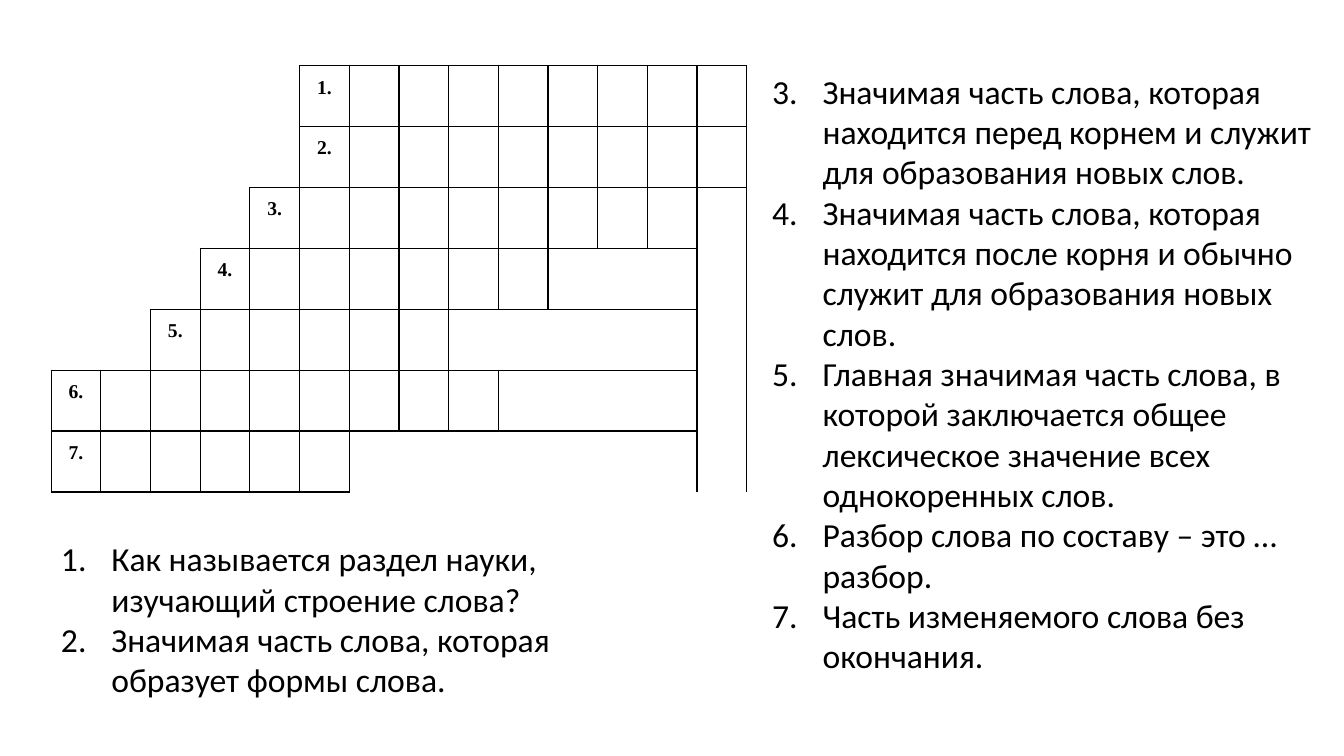
"""Build a word-structure crossword slide with its seven numbered clues."""
from lxml import etree
from pptx import Presentation
from pptx.dml.color import RGBColor
from pptx.enum.text import MSO_AUTO_SIZE, PP_ALIGN
from pptx.oxml.ns import qn
from pptx.util import Pt

BLACK = RGBColor(0, 0, 0)
WHITE = RGBColor(255, 255, 255)
CENTER = PP_ALIGN.CENTER
FIT_SHAPE = MSO_AUTO_SIZE.SHAPE_TO_FIT_TEXT
NO_STYLE = "{2D5ABB26-0587-4C30-8999-92F81FD0307C}"

COLUMNS = 14
LAST = COLUMNS - 1
CELL_WIDTH, CELL_HEIGHT = 35.5, 43.5
ANSWERS = [(5, 9), (5, 9), (4, 9), (3, 7), (2, 6), (0, 9), (0, 6)]
BLANKS = [
    (0, 0, 2, 1), (0, 2, 1, 4), (2, 2, 2, 3), (3, 0, 3, 2), (4, 0, 4, 1),
    (3, 10, 3, 12), (4, 8, 4, 12), (5, 9, 5, 12), (6, 6, 6, 12), (2, 13, 6, 13),
]
CLUES_BELOW = [
    "Как называется раздел науки, изучающий строение слова?",
    "Значимая часть слова, которая образует формы слова.",
]
CLUES_RIGHT = [
    "Значимая часть слова, которая находится перед корнем и служит для образования новых слов.",
    "Значимая часть слова, которая находится после корня и обычно служит для образования новых слов.",
    "Главная значимая часть слова, в которой заключается общее лексическое значение всех однокоренных слов.",
    "Разбор слова по составу – это … разбор.",
    "Часть изменяемого слова без окончания.",
]


def draw_borders(cell, sides):
    properties = cell._tc.get_or_add_tcPr()
    for side in sides:
        line = etree.SubElement(properties, qn(f"a:ln{side}"), w=str(Pt(1)))
        ink = etree.SubElement(line, qn("a:solidFill"))
        etree.SubElement(ink, qn("a:srgbClr"), val=str(BLACK))


def add_clues(clues, first_number, left, top, width, height):
    box = slide.shapes.add_textbox(Pt(left), Pt(top), Pt(width), Pt(height))
    frame = box.text_frame
    frame.word_wrap = True
    frame.auto_size = FIT_SHAPE
    frame.text = "\n".join(clues)
    for clue in frame.paragraphs:
        properties = clue._p.get_or_add_pPr()
        properties.set("marL", str(Pt(36)))
        properties.set("indent", str(Pt(-36)))
        etree.SubElement(properties, qn("a:buAutoNum"),
                         type="arabicPeriod", startAt=str(first_number))
        clue.font.size = Pt(24)
        clue.font.name = "Calibri"
        clue.font.color.rgb = BLACK


presentation = Presentation()
presentation.slide_width = Pt(960)
presentation.slide_height = Pt(540)
slide = presentation.slides.add_slide(presentation.slide_layouts[6])

crossword = slide.shapes.add_table(
    len(ANSWERS), COLUMNS, Pt(36.5), Pt(47),
    Pt(CELL_WIDTH * COLUMNS), Pt(CELL_HEIGHT * len(ANSWERS))).table
crossword.first_row = False
crossword.horz_banding = False
crossword._tbl.tblPr.find(qn("a:tableStyleId")).text = NO_STYLE
for column in crossword.columns:
    column.width = Pt(CELL_WIDTH)

for row, (start, length) in enumerate(ANSWERS):
    crossword.rows[row].height = Pt(CELL_HEIGHT)
    end = start + length
    for col in range(COLUMNS):
        cell = crossword.cell(row, col)
        if start <= col < end:
            draw_borders(cell, "LRTB")
        elif col == LAST:
            draw_borders(cell, "L")
        elif col >= end:
            draw_borders(cell, "LT" if col == end else "T")
        cell.fill.solid()
        cell.fill.fore_color.rgb = WHITE

    number_cell = crossword.cell(row, start)
    number_cell.margin_left = number_cell.margin_right = Pt(5)
    number_cell.margin_top = number_cell.margin_bottom = 0
    number_cell.text = f"{row + 1}."
    number = number_cell.text_frame.paragraphs[0]
    number.alignment = CENTER
    number.line_spacing = 1.5
    number.font.size = Pt(14)
    number.font.name = "Times New Roman"
    number.font.bold = True
    number.font.color.rgb = BLACK

for top_row, left_col, bottom_row, right_col in BLANKS:
    crossword.cell(top_row, left_col).merge(crossword.cell(bottom_row, right_col))

add_clues(CLUES_RIGHT, 3, 544.5, 47, 408, 465)
add_clues(CLUES_BELOW, 1, 36.5, 381, 449, 124)

presentation.save("out.pptx")
